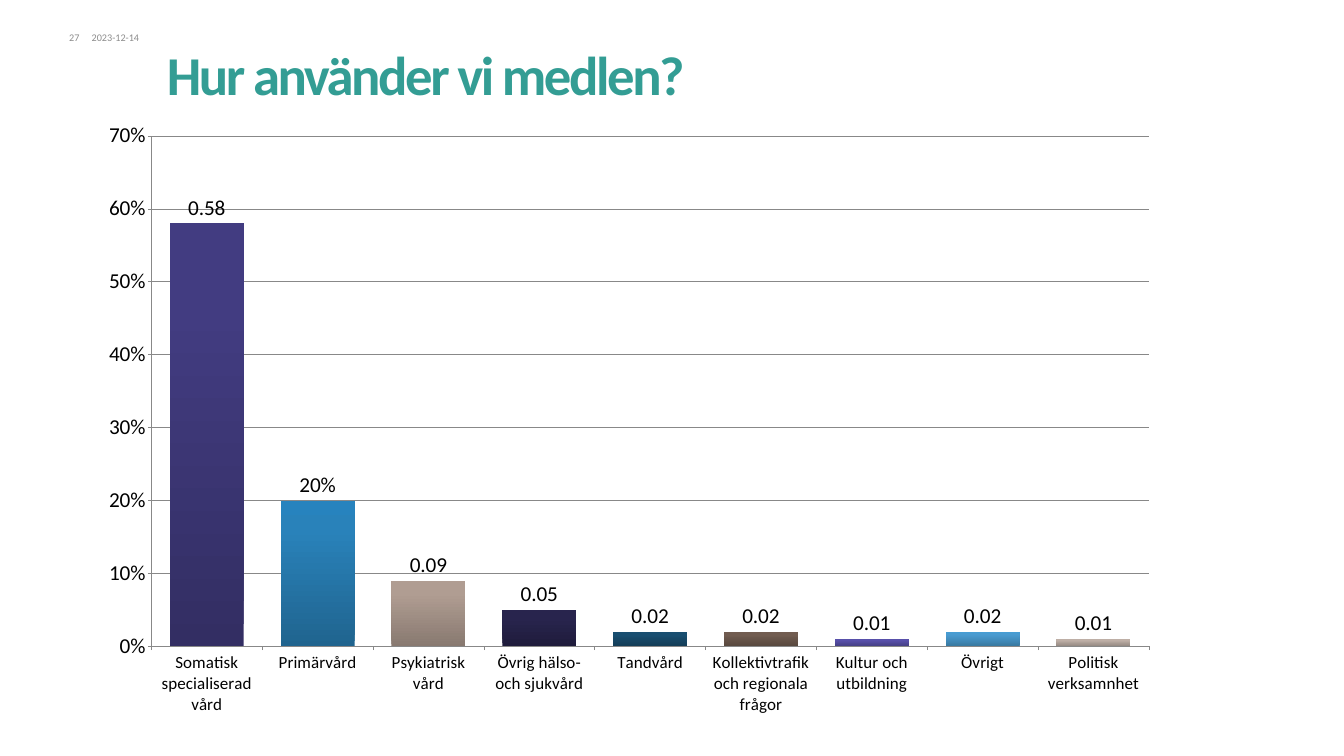
import copy

import lxml.etree
import pptx
import pptx.chart.data
import pptx.dml.color
import pptx.enum.chart
import pptx.enum.text
import pptx.oxml.ns
import pptx.util

Inches, Pt, qn = pptx.util.Inches, pptx.util.Pt, pptx.oxml.ns.qn
FONT = "Calibri"

# Category, share of the budget, gradient from the foot to the top of the bar
SHARES = [
    ("Somatisk specialiserad vård", 0.58, ("332E63", "423C81", "413B83")),
    ("Primärvård", 0.2, ("20648F", "2982BA", "2783BE")),
    ("Psykiatrisk vård", 0.09, ("887970", "B09D92", "B19E92")),
    ("Övrig hälso- och sjukvård", 0.05, ("1F1C3C", "28244D", "27234F")),
    ("Tandvård", 0.02, ("133C56", "194E70", "174E72")),
    ("Kollektivtrafik och regionala frågor", 0.02, ("57473D", "715C50", "735D4F")),
    ("Kultur och utbildning", 0.01, ("443E83", "5850AA", "574FAC")),
    ("Övrigt", 0.02, ("3878A0", "499BD0", "469DD4")),
    ("Politisk verksamnhet", 0.01, ("928780", "BEAFA6", "C0B0A6")),
]


def rgb(value):
    return pptx.dml.color.RGBColor.from_string(value)


def set_font(font, size, color):
    font.name = FONT
    font.size = Pt(size)
    font.color.rgb = rgb(color)


deck = pptx.Presentation()
deck.slide_width, deck.slide_height = Inches(21.99), Inches(12.37)
page = deck.slides.add_slide(deck.slide_layouts[5])

# Title
title = page.shapes.title
title.left, title.top = Inches(2.73), Inches(0.51)
title.width, title.height = Inches(19.26), Inches(1.32)
frame = title.text_frame
frame.text = "Hur använder vi medlen?"
frame.auto_size = pptx.enum.text.MSO_AUTO_SIZE.NONE
frame.vertical_anchor = pptx.enum.text.MSO_ANCHOR.BOTTOM
frame.margin_left = frame.margin_top = frame.margin_right = 0
frame.margin_bottom = Inches(0.08)
heading = frame.paragraphs[0]
heading.alignment = pptx.enum.text.PP_ALIGN.LEFT
heading.line_spacing = 0.85
span = heading.runs[0]
set_font(span.font, 64.5, "339D94")
span.font.bold = True
span.font._element.set("spc", "-280")

# Page number and date
for text, left, width, align in [
    ("27", 0.91, 0.39, pptx.enum.text.PP_ALIGN.RIGHT),
    ("2023-12-14", 1.5, 0.87, pptx.enum.text.PP_ALIGN.LEFT),
]:
    box = page.shapes.add_textbox(Inches(left), Inches(0.52), Inches(width), Inches(0.2))
    frame = box.text_frame
    frame.text = text
    frame.word_wrap = True
    frame.margin_left = frame.margin_top = frame.margin_right = frame.margin_bottom = 0
    frame.paragraphs[0].alignment = align
    set_font(frame.paragraphs[0].runs[0].font, 12, "8C8C8C")

# One series per category, so that every bar has its own colour
data = pptx.chart.data.CategoryChartData()
data.categories = [name for name, share, colors in SHARES]
for index, (name, share, colors) in enumerate(SHARES):
    values = [None] * len(SHARES)
    values[index] = share
    data.add_series(f"Series {index + 1}", values)
chart = page.shapes.add_chart(
    pptx.enum.chart.XL_CHART_TYPE.COLUMN_CLUSTERED,
    Inches(1.5), Inches(1.56), Inches(17.76), Inches(10.71), data,
).chart
chart.has_legend = False
chart.has_title = False
set_font(chart.font, 25, "000000")
plot = chart.plots[0]
plot.gap_width, plot.overlap = 50, 100
plot.vary_by_categories = False

for series, (name, share, colors) in zip(plot.series, SHARES):
    series.invert_if_negative = False
    fill = series.format.fill
    fill.gradient()
    fill.gradient_angle = 90
    stop_list = series._element.find(".//" + qn("a:gsLst"))
    stop_list.append(copy.deepcopy(stop_list[-1]))
    for stop, position, color in zip(fill.gradient_stops, (0, 0.8, 1), colors):
        stop.position = position
        stop.color.rgb = rgb(color)
    labels = series.data_labels
    labels.show_value = True
    labels.position = pptx.enum.chart.XL_LABEL_POSITION.OUTSIDE_END
    labels.number_format = "0%" if name == "Primärvård" else "General"
    labels.number_format_is_linked = False
    set_font(labels.font, 25, "000000")

# Axes
share_axis, category_axis = chart.value_axis, chart.category_axis
share_axis.minimum_scale, share_axis.maximum_scale = 0, 0.7
share_axis.major_unit = 0.1
share_axis.tick_labels.number_format = "0%"
share_axis.tick_labels.number_format_is_linked = False
share_axis.has_major_gridlines = True
for axis, size in [(share_axis, 25), (category_axis, 20)]:
    axis.major_tick_mark = pptx.enum.chart.XL_TICK_MARK.OUTSIDE
    set_font(axis.tick_labels.font, size, "000000")
for lined in (share_axis, category_axis, share_axis.major_gridlines):
    lined.format.line.color.rgb = rgb("888888")
    lined.format.line.width = Pt(0.75)

# Inner plot area as shares of the chart
plot_area = chart._chartSpace.find(".//" + qn("c:plotArea"))
for old_layout in plot_area.findall(qn("c:layout")):
    plot_area.remove(old_layout)
layout = lxml.etree.Element(qn("c:layout"))
manual = lxml.etree.SubElement(layout, qn("c:manualLayout"))
for tag, value in [
    ("layoutTarget", "inner"), ("xMode", "edge"), ("yMode", "edge"),
    ("x", "0.055"), ("y", "0.062"), ("w", "0.919"), ("h", "0.78"),
]:
    lxml.etree.SubElement(manual, qn("c:" + tag)).set("val", value)
plot_area.insert(0, layout)

deck.save("out.pptx")
